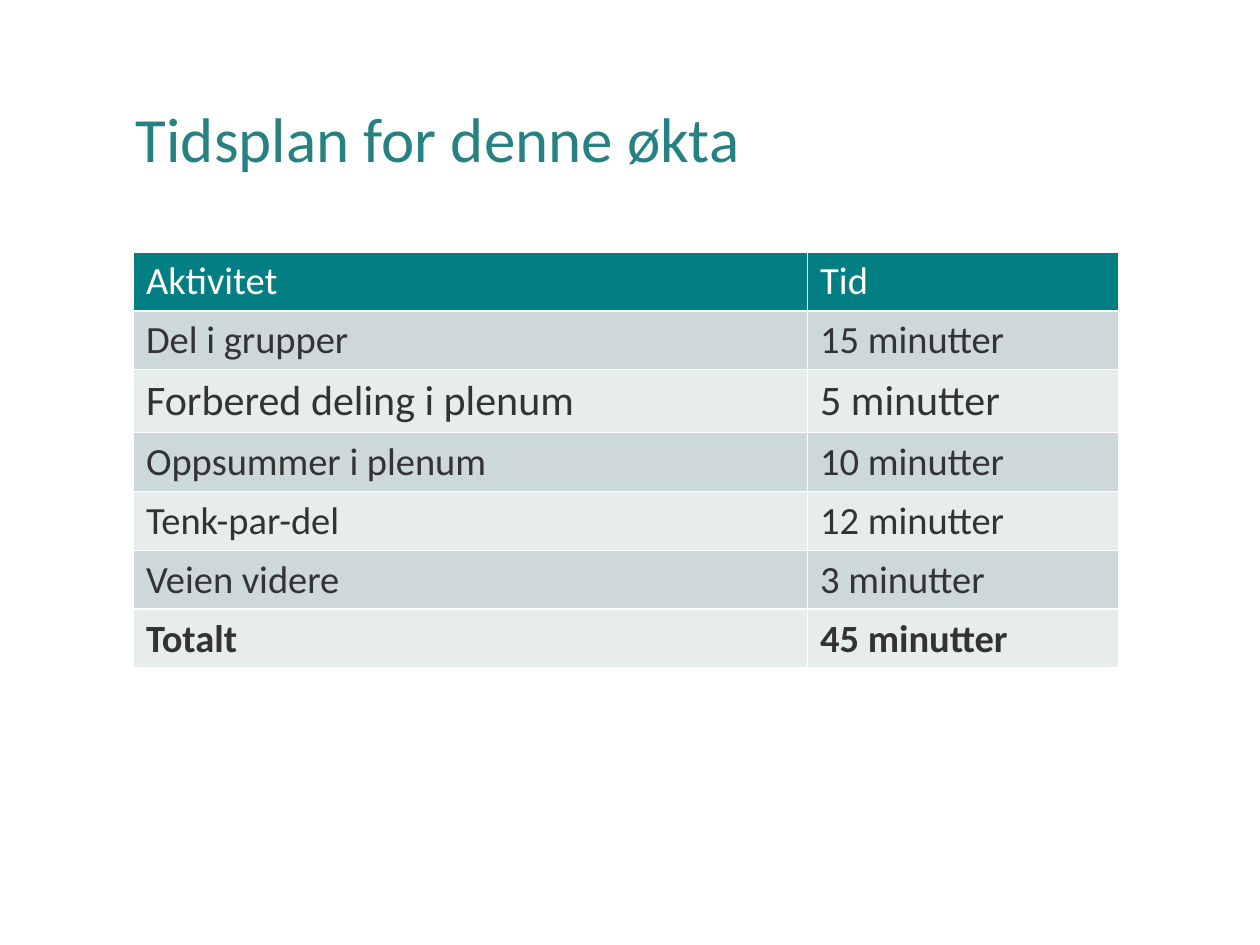
from pptx import Presentation
from pptx.dml.color import RGBColor
from pptx.enum.text import MSO_ANCHOR
from pptx.util import Inches, Pt

MIDDLE = MSO_ANCHOR.MIDDLE
FONT = "Calibri"
COLORS = {
    "title": "268183",
    "header": "037F83",
    "header_text": "FFFFFF",
    "text": "333333",
    "band_dark": "CCD8D9",
    "band_light": "E7ECED",
}
SCHEDULE = [
    ("Aktivitet", "Tid"),
    ("Del i grupper", "15 minutter"),
    ("Forbered deling i plenum", "5 minutter"),
    ("Oppsummer i plenum", "10 minutter"),
    ("Tenk-par-del", "12 minutter"),
    ("Veien videre", "3 minutter"),
    ("Totalt", "45 minutter"),
]
LARGE_ROW = 2
TOTAL_ROW = len(SCHEDULE) - 1
COL_WIDTHS = (5.35, 2.47)
ROW_HEIGHT = 0.41


def write(tf, text, size, color, bold=False):
    tf.text = text
    font = tf.paragraphs[0].runs[0].font
    font.name = FONT
    font.size = Pt(size)
    font.bold = bold
    font.color.rgb = RGBColor.from_string(COLORS[color])


prs = Presentation()
prs.slide_width = Inches(10)
prs.slide_height = Inches(7.5)
s = prs.slides.add_slide(prs.slide_layouts[6])

title = s.shapes.add_textbox(Inches(0.98), Inches(0.4), Inches(8.29), Inches(1.45))
tf = title.text_frame
tf.word_wrap = True
tf.vertical_anchor = MIDDLE
write(tf, "Tidsplan for denne økta", 36, "title")
tf.paragraphs[0].line_spacing = 0.9

# The default table style supplies the white borders
table = s.shapes.add_table(
    len(SCHEDULE), len(COL_WIDTHS), Inches(1.06), Inches(2),
    Inches(sum(COL_WIDTHS)), Inches(ROW_HEIGHT * len(SCHEDULE)),
).table
for column, width in zip(table.columns, COL_WIDTHS):
    column.width = Inches(width)

for i, row in enumerate(SCHEDULE):
    table.rows[i].height = Inches(ROW_HEIGHT)
    if i == 0:
        fill, color = "header", "header_text"
    else:
        fill, color = "band_dark" if i % 2 else "band_light", "text"
    size = 24 if i == LARGE_ROW else 22
    for j, text in enumerate(row):
        cell = table.cell(i, j)
        cell.fill.solid()
        cell.fill.fore_color.rgb = RGBColor.from_string(COLORS[fill])
        write(cell.text_frame, text, size, color, bold=i == TOTAL_ROW)

prs.save("out.pptx")
